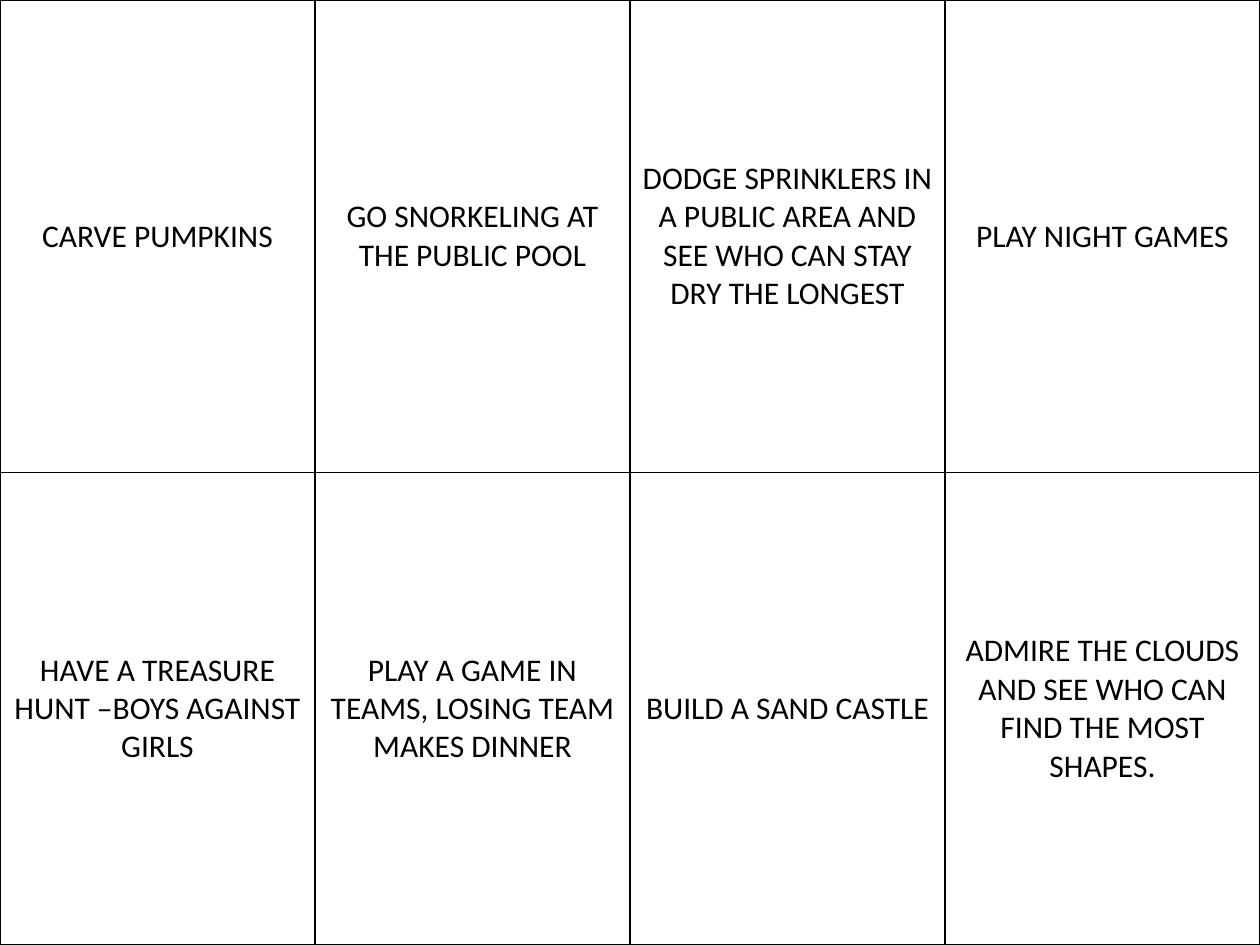
from lxml import etree
from pptx import Presentation
from pptx.dml.color import RGBColor
from pptx.enum.text import MSO_ANCHOR, PP_ALIGN
from pptx.oxml.ns import qn
from pptx.util import Pt

MIDDLE = MSO_ANCHOR.MIDDLE
CENTER = PP_ALIGN.CENTER

# Content
ACTIVITIES = [
    ["CARVE PUMPKINS",
     "GO SNORKELING AT THE PUBLIC POOL",
     "DODGE SPRINKLERS IN A PUBLIC AREA AND SEE WHO CAN STAY DRY THE LONGEST",
     "PLAY NIGHT GAMES"],
    ["HAVE A TREASURE HUNT –BOYS AGAINST GIRLS",
     "PLAY A GAME IN TEAMS, LOSING TEAM MAKES DINNER",
     "BUILD A SAND CASTLE",
     "ADMIRE THE CLOUDS AND SEE WHO CAN FIND THE MOST SHAPES."],
]
COLORS = {"text": "000000", "border": "000000", "card": "FFFFFF"}
FONT = {"name": "Calibri", "size": Pt(18), "bold": False}
TABLE_FLAGS = {"first_row": False, "horz_banding": False}
BORDER_WIDTH = Pt(1)
SLIDE_W, SLIDE_H = 1260, 945  # px
EMU_PER_PX = 914400 / 126


def emu(px):
    return round(px * EMU_PER_PX)


def set_format(obj, values):
    for name, value in values.items():
        setattr(obj, name, value)


def add_borders(cell):
    tc_pr = cell._tc.get_or_add_tcPr()
    for i, side in enumerate(("lnL", "lnR", "lnT", "lnB")):
        ln = etree.Element(qn(f"a:{side}"), w=str(BORDER_WIDTH))
        fill = etree.SubElement(ln, qn("a:solidFill"))
        etree.SubElement(fill, qn("a:srgbClr"), val=COLORS["border"])
        tc_pr.insert(i, ln)  # borders come before the fill


def fill_card(cell, text):
    cell.vertical_anchor = MIDDLE
    cell.fill.solid()
    cell.fill.fore_color.rgb = RGBColor.from_string(COLORS["card"])
    add_borders(cell)
    p = cell.text_frame.paragraphs[0]
    p.alignment = CENTER
    r = p.add_run()
    r.text = text
    set_format(r.font, FONT)
    r.font.color.rgb = RGBColor.from_string(COLORS["text"])


def main():
    prs = Presentation()
    prs.slide_width, prs.slide_height = emu(SLIDE_W), emu(SLIDE_H)
    s = prs.slides.add_slide(prs.slide_layouts[6])

    # Grid of equal cards over the whole slide
    n_rows, n_cols = len(ACTIVITIES), len(ACTIVITIES[0])
    table = s.shapes.add_table(n_rows, n_cols, 0, 0,
                               prs.slide_width, prs.slide_height).table
    set_format(table, TABLE_FLAGS)

    # Card texts
    for i, row in enumerate(ACTIVITIES):
        for j, text in enumerate(row):
            fill_card(table.cell(i, j), text)

    prs.save("out.pptx")


if __name__ == "__main__":
    main()
